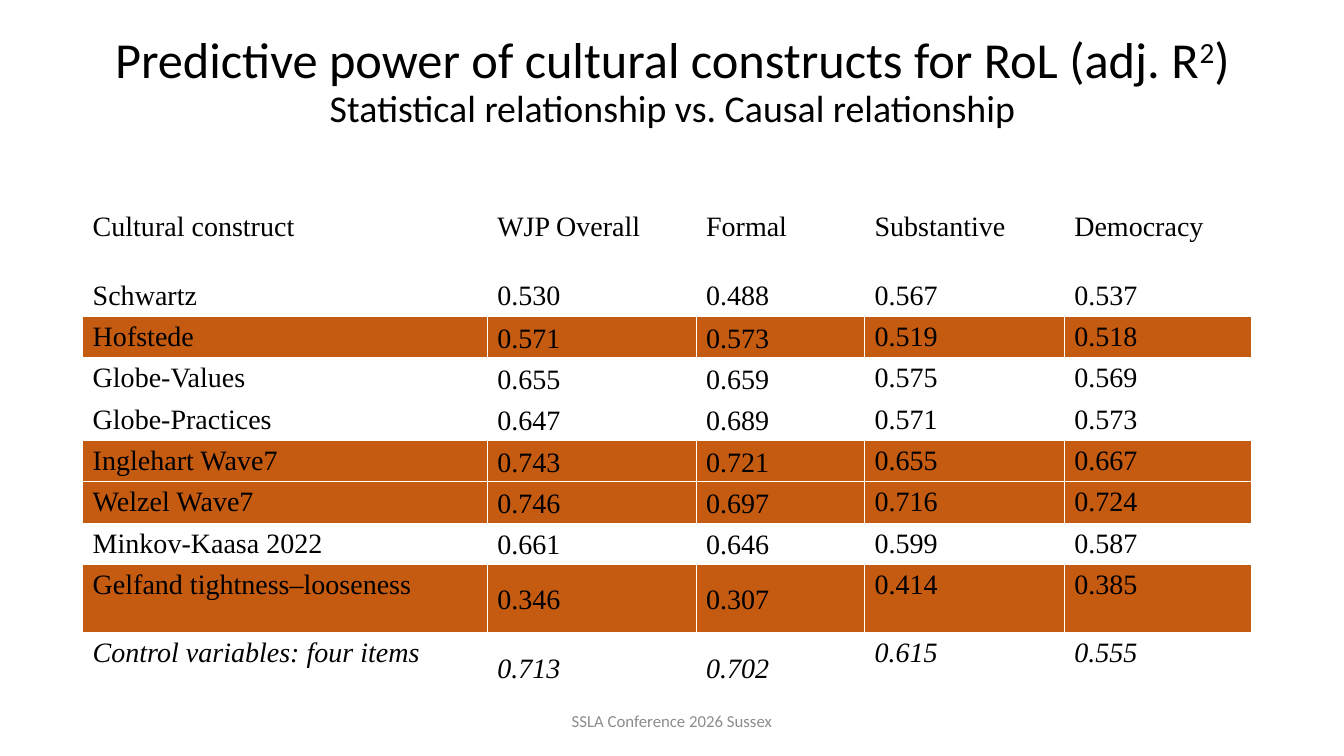
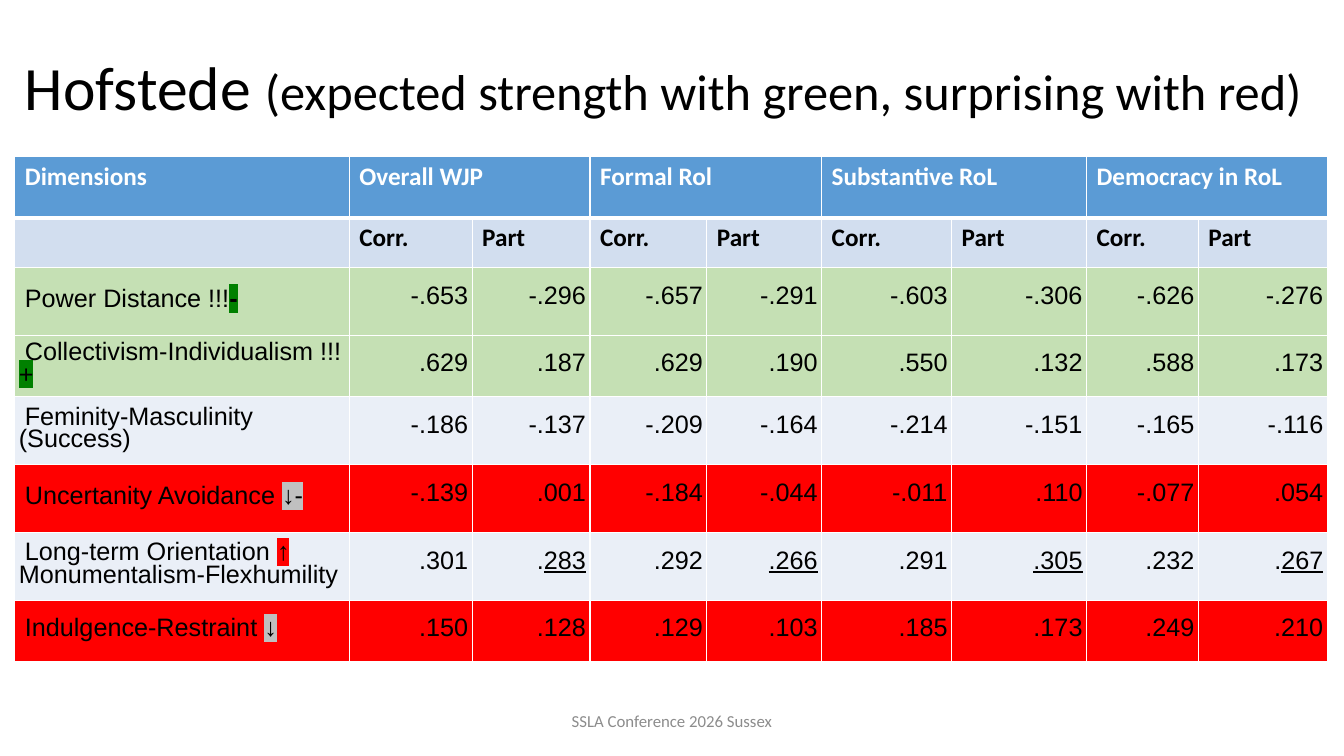
from lxml.etree import SubElement
from pptx import Presentation
from pptx.dml.color import RGBColor
from pptx.enum.text import MSO_ANCHOR as ANCHOR, MSO_AUTO_SIZE as AUTO, PP_ALIGN as ALIGN
from pptx.oxml import parse_xml
from pptx.oxml.ns import nsdecls, qn
from pptx.util import Inches, Pt

BLACK, WHITE, GRAY = "000000", "FFFFFF", "8C8C8C"
ORANGE, BLUE, PALE_BLUE, MIST = "C55A11", "5B9BD5", "D2DEEF", "EAEFF7"
LIGHT_GREEN, GREEN, RED, SILVER = "C5E0B4", "008000", "FF0000", "C0C0C0"
SANS, SERIF, ARIAL = "Calibri", "Times New Roman", "Arial"


def rgb(value):
    return RGBColor.from_string(value)


class Deck:
    """Shared style and the current slide; boxes are percentages of the slide."""

    def __init__(self):
        self.prs = Presentation()
        self.prs.slide_width, self.prs.slide_height = Inches(13.333), Inches(7.5)
        self.slide = None

    def box(self, x, y, w, h):
        sides = (self.prs.slide_width, self.prs.slide_height) * 2
        return [int(side * v / 100) for side, v in zip(sides, (x, y, w, h))]

    def new_slide(self):
        self.slide = self.prs.slides.add_slide(self.prs.slide_layouts[5])

    def style(self, r, size, name=SANS, color=BLACK, bold=False, italic=False,
              underline=False, highlight=None, baseline=0):
        f = r.font
        f.size, f.name, f.bold, f.italic, f.underline = Pt(size), name, bold, italic, underline
        f.color.rgb = rgb(color)
        rPr = r._r.get_or_add_rPr()
        if highlight:
            mark = parse_xml(f'<a:highlight {nsdecls("a")}><a:srgbClr val="{highlight}"/></a:highlight>')
            rPr.find(qn("a:solidFill")).addnext(mark)
        if baseline:
            rPr.set("baseline", str(baseline * 1000))

    def add_run(self, p, text, size, **look):
        r = p.add_run()
        r.text = text
        self.style(r, size, **look)

    def title(self, box, lines, align, anchor):
        sp = self.slide.shapes.title
        sp.left, sp.top, sp.width, sp.height = self.box(*box)
        tf = sp.text_frame
        tf.auto_size, tf.vertical_anchor, tf.word_wrap = AUTO.NONE, anchor, True
        if anchor == ANCHOR.TOP:
            tf.margin_top = 0
        p = tf.paragraphs[0]
        p.alignment, p.line_spacing = align, 0.9
        for i, line in enumerate(lines):
            if i:
                p.add_line_break()
            for text, size, baseline in line:
                self.add_run(p, text, size, baseline=baseline)

    def footer(self, text):
        width = 33.75
        sp = self.slide.shapes.add_textbox(*self.box((100 - width) / 2, 92.67, width, 5.33))
        tf = sp.text_frame
        tf.text, tf.word_wrap, tf.vertical_anchor = text, True, ANCHOR.MIDDLE
        p = tf.paragraphs[0]
        p.alignment = ALIGN.CENTER
        self.style(p.runs[0], 12, color=GRAY)

    def table(self, box, cols, rows):
        """Add a plain table; cols and rows are relative sizes."""
        x, y, w, h = self.box(*box)
        tbl = self.slide.shapes.add_table(len(rows), len(cols), x, y, w, h).table
        tbl.first_row = tbl.horz_banding = False
        for col, share in zip(tbl.columns, cols):
            col.width = int(w * share / sum(cols))
        for row, share in zip(tbl.rows, rows):
            row.height = int(h * share / sum(rows))
        return tbl

    def cell(self, cell, fill, border, bottom=None):
        """Set fill and white borders; return the first paragraph."""
        if fill:
            cell.fill.solid()
            cell.fill.fore_color.rgb = rgb(fill)
        else:
            cell.fill.background()
        tcPr = cell._tc.get_or_add_tcPr()
        for i, side in enumerate("LRTB"):
            width = bottom if bottom and side == "B" else border
            ln = parse_xml(f'<a:ln{side} {nsdecls("a")} w="{Pt(width)}"/>')
            SubElement(SubElement(ln, qn("a:solidFill")), qn("a:srgbClr")).set("val", WHITE)
            tcPr.insert(i, ln)
        return cell.text_frame.paragraphs[0]


def predictive_power(deck):
    deck.new_slide()
    deck.title((6.9, 4.67, 86.25, 19.33),
               [[("Predictive power of cultural constructs for RoL (adj. R", 36, 0),
                 ("2", 36, 30), (")", 36, 0)],
                [("Statistical relationship vs. Causal relationship", 27, 0)]],
               ALIGN.CENTER, ANCHOR.TOP)
    data = [
        ("Cultural construct", "WJP Overall", "Formal", "Substantive", "Democracy"),
        ("Schwartz", "0.530", "0.488", "0.567", "0.537"),
        ("Hofstede", "0.571", "0.573", "0.519", "0.518"),
        ("Globe-Values", "0.655", "0.659", "0.575", "0.569"),
        ("Globe-Practices", "0.647", "0.689", "0.571", "0.573"),
        ("Inglehart Wave7", "0.743", "0.721", "0.655", "0.667"),
        ("Welzel Wave7", "0.746", "0.697", "0.716", "0.724"),
        ("Minkov-Kaasa 2022", "0.661", "0.646", "0.599", "0.587"),
        ("Gelfand tightness–looseness", "0.346", "0.307", "0.414", "0.385"),
        ("Control variables: four items", "0.713", "0.702", "0.615", "0.555"),
    ]
    highlighted = (2, 5, 6, 8)
    tbl = deck.table((6.15, 27.33, 87, 65.47), [4.01, 2.07, 1.67, 1.98, 1.86],
                     [0.68] + [0.41] * 7 + [0.68] * 2)
    for i, row in enumerate(data):
        for j, text in enumerate(row):
            cell = tbl.cell(i, j)
            p = deck.cell(cell, ORANGE if i in highlighted else None, 0.75)
            # A slim bottom margin keeps each line within its row height
            cell.margin_bottom = Inches(0.02)
            p.text, p.alignment = text, ALIGN.JUSTIFY
            if i > 1 and j in (1, 2):
                cell.vertical_anchor = ANCHOR.MIDDLE
            deck.style(p.runs[0], 20, name=SERIF, italic=i == len(data) - 1)


def hofstede(deck):
    deck.new_slide()
    deck.title((1.1, 5.33, 97.67, 13.33),
               [[("Hofstede ", 44, 0),
                 ("(expected strength with green, surprising with red)", 36, 0)]],
               ALIGN.LEFT, ANCHOR.MIDDLE)
    tbl = deck.table((1.1, 20.67, 97.67, 66.9),
                     [3.32, 1.22, 1.17, 1.16, 1.14, 1.29, 1.34, 1.11, 1.28],
                     [0.61, 0.49, 0.67, 0.61, 0.67, 0.67, 0.67, 0.61])

    # Two header rows: merged groups, then Corr. and Part under each
    groups = ["Overall WJP", "Formal Rol", "Substantive RoL", "Democracy in RoL"]
    top = ["Dimensions"] + [text for group in groups for text in (group, "")]
    sub = [""] + ["Corr.", "Part"] * len(groups)
    for i, (texts, fill, color, bottom) in enumerate([(top, BLUE, WHITE, 3),
                                                      (sub, PALE_BLUE, BLACK, None)]):
        for j, text in enumerate(texts):
            p = deck.cell(tbl.cell(i, j), fill, 1, bottom)
            if text:
                p.text = text
                deck.style(p.runs[0], 18, color=color, bold=True)
    for j in range(1, len(top), 2):
        tbl.cell(0, j).merge(tbl.cell(0, j + 1))

    # Fill, label runs with highlight, values (underlined after "_")
    data = [
        (LIGHT_GREEN, [("Power Distance !!!", None), ("-", GREEN)],
         "-.653 -.296 -.657 -.291 -.603 -.306 -.626 -.276"),
        (LIGHT_GREEN, [("Collectivism-Individualism !!!", None), ("+", GREEN)],
         ".629 .187 .629 .190 .550 .132 .588 .173"),
        (MIST, [("Feminity-Masculinity (Success)", None)],
         "-.186 -.137 -.209 -.164 -.214 -.151 -.165 -.116"),
        (RED, [("Uncertanity Avoidance ", None), ("↓-", SILVER)],
         "-.139 .001 -.184 -.044 -.011 .110 -.077 .054"),
        (MIST, [("Long-term Orientation ", None), ("↑ ", RED),
                ("Monumentalism-Flexhumility", None)],
         ".301 ._283 .292 _.266 .291 _.305 .232 ._267"),
        (RED, [("Indulgence-Restraint ", None), ("↓", SILVER)],
         ".150 .128 .129 .103 .185 .173 .249 .210"),
    ]
    for i, (fill, label, values) in enumerate(data, start=2):
        for j, value in enumerate([None] + values.split()):
            cell = tbl.cell(i, j)
            p = deck.cell(cell, fill, 1)
            cell.margin_left = cell.margin_right = cell.margin_top = cell.margin_bottom = 0
            p.space_after = Pt(8)
            if value is None:
                cell.vertical_anchor, p.line_spacing = ANCHOR.MIDDLE, Pt(16)
                pPr = p._p.get_or_add_pPr()
                pPr.set("marL", str(Inches(0.04)))
                pPr.set("indent", str(Inches(0.06)))
                for text, highlight in label:
                    deck.add_run(p, text, 18, name=ARIAL, highlight=highlight,
                                 bold=text == "-")
            else:
                cell.margin_right = Inches(0.04)
                p.alignment, p.line_spacing = ALIGN.RIGHT, Pt(30)
                plain, _, underlined = value.partition("_")
                for text, underline in ((plain, False), (underlined, True)):
                    if text:
                        deck.add_run(p, text, 18, name=ARIAL, underline=underline)


def main():
    deck = Deck()
    for build in (predictive_power, hofstede):
        build(deck)
        deck.footer("SSLA Conference 2026 Sussex")
    deck.prs.save("out.pptx")


if __name__ == "__main__":
    main()
